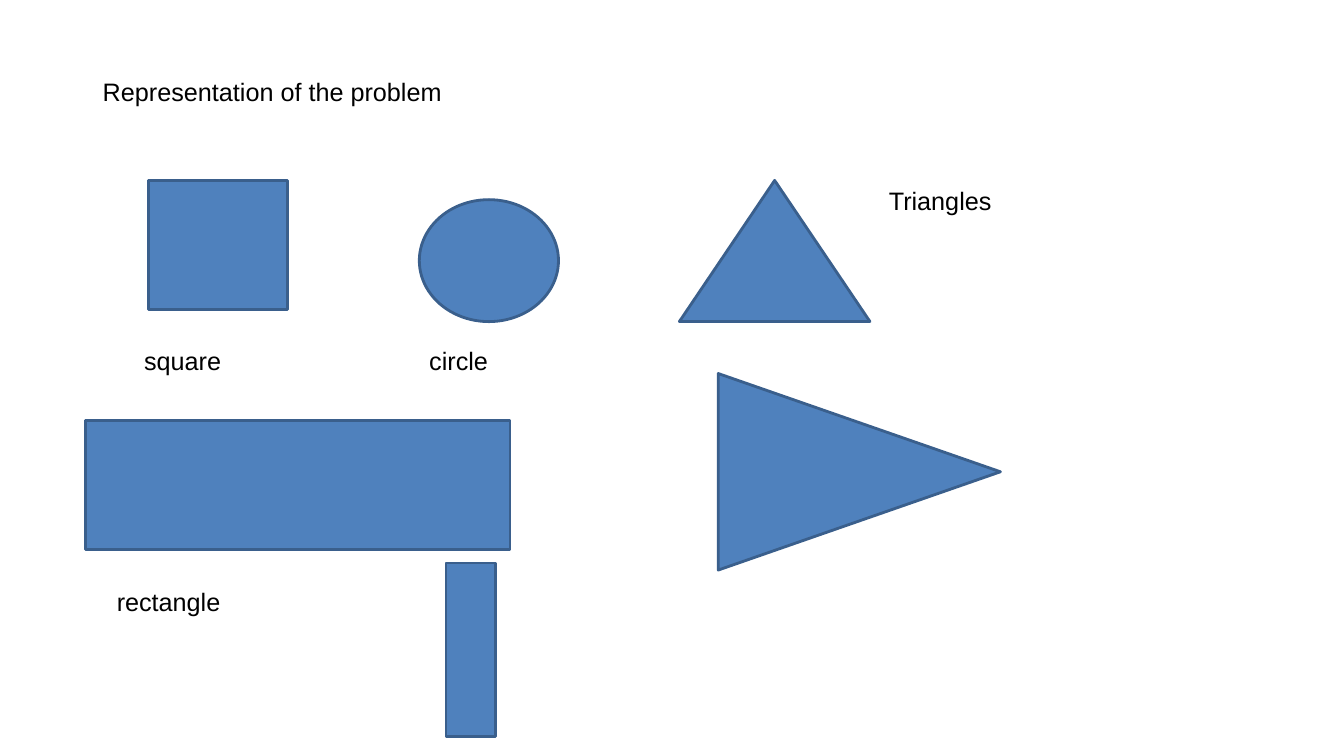
from pptx import Presentation
from pptx.dml.color import RGBColor
from pptx.enum.shapes import MSO_SHAPE as SHAPE
from pptx.enum.text import MSO_ANCHOR as ANCHOR, MSO_AUTO_SIZE as AUTO, PP_ALIGN as ALIGN
from pptx.util import Pt

COLORS = {"fill": "4F81BD", "line": "3A5F8C", "text": "000000"}
FONT = {"name": "Arial", "size": Pt(18), "bold": False}
FRAME = {"word_wrap": True, "auto_size": AUTO.SHAPE_TO_FIT_TEXT, "vertical_anchor": ANCHOR.TOP,
         "margin_left": Pt(7.2), "margin_right": Pt(7.2),
         "margin_top": Pt(3.6), "margin_bottom": Pt(3.6)}
TEXT_H = 28.8

# Each group: box (left, top), label (text, dx, dy, width),
# figures (preset, dx, dy, width, height, rotation)
GROUPS = [
    ((95.8, 128.9), ("square", 0, 114.5, 139.7),
     [(SHAPE.RECTANGLE, 10, 0, 99.4, 92.2, 0)]),
    ((299.5, 142.6), ("circle", 0, 100.8, 159.1),
     [(SHAPE.OVAL, 0, 0, 99.4, 87.1, 0)]),
    ((485.3, 128.9), ("Triangles", 142.5, 0, 200.2),
     [(SHAPE.ISOSCELES_TRIANGLE, 0, 0, 136.1, 100.8, 0),
      (SHAPE.ISOSCELES_TRIANGLE, 58.3, 107.3, 140.4, 201.6, 90)]),
    ((61.2, 300.2), ("rectangle", 15.1, 115.2, 159.1),
     [(SHAPE.RECTANGLE, 0, 0, 303.1, 92.2, 0),
      (SHAPE.RECTANGLE, 213.1, 146.2, 123.8, 35.3, 90)]),
]


def color(name):
    return RGBColor.from_string(COLORS[name])


def set_attrs(obj, values):
    for name, value in values.items():
        setattr(obj, name, value)


def write_text(sp, text):
    tf = sp.text_frame
    set_attrs(tf, FRAME)
    p = tf.paragraphs[0]
    p.alignment = ALIGN.LEFT
    r = p.add_run()
    r.text = text
    set_attrs(r.font, FONT)
    r.font.color.rgb = color("text")


def draw_title(slide, text, left, top, width):
    sp = slide.shapes.title
    set_attrs(sp, {"left": Pt(left), "top": Pt(top), "width": Pt(width), "height": Pt(TEXT_H)})
    write_text(sp, text)


def draw_group(slide, box, label, figures):
    left, top = box
    # Figures
    for preset, dx, dy, width, height, rotation in figures:
        sp = slide.shapes.add_shape(preset, Pt(left + dx), Pt(top + dy), Pt(width), Pt(height))
        sp.rotation = rotation
        sp.shadow.inherit = False
        sp.fill.solid()
        sp.fill.fore_color.rgb = color("fill")
        sp.line.color.rgb = color("line")
        sp.line.width = Pt(2)
    # Label
    text, dx, dy, width = label
    sp = slide.shapes.add_textbox(Pt(left + dx), Pt(top + dy), Pt(width), Pt(TEXT_H))
    write_text(sp, text)


def main():
    prs = Presentation()
    prs.slide_width, prs.slide_height = Pt(960), Pt(540)
    slide = prs.slides.add_slide(prs.slide_layouts[5])
    draw_title(slide, "Representation of the problem", 66.2, 51.1, 435.6)
    for box, label, figures in GROUPS:
        draw_group(slide, box, label, figures)
    prs.save("out.pptx")


if __name__ == "__main__":
    main()
